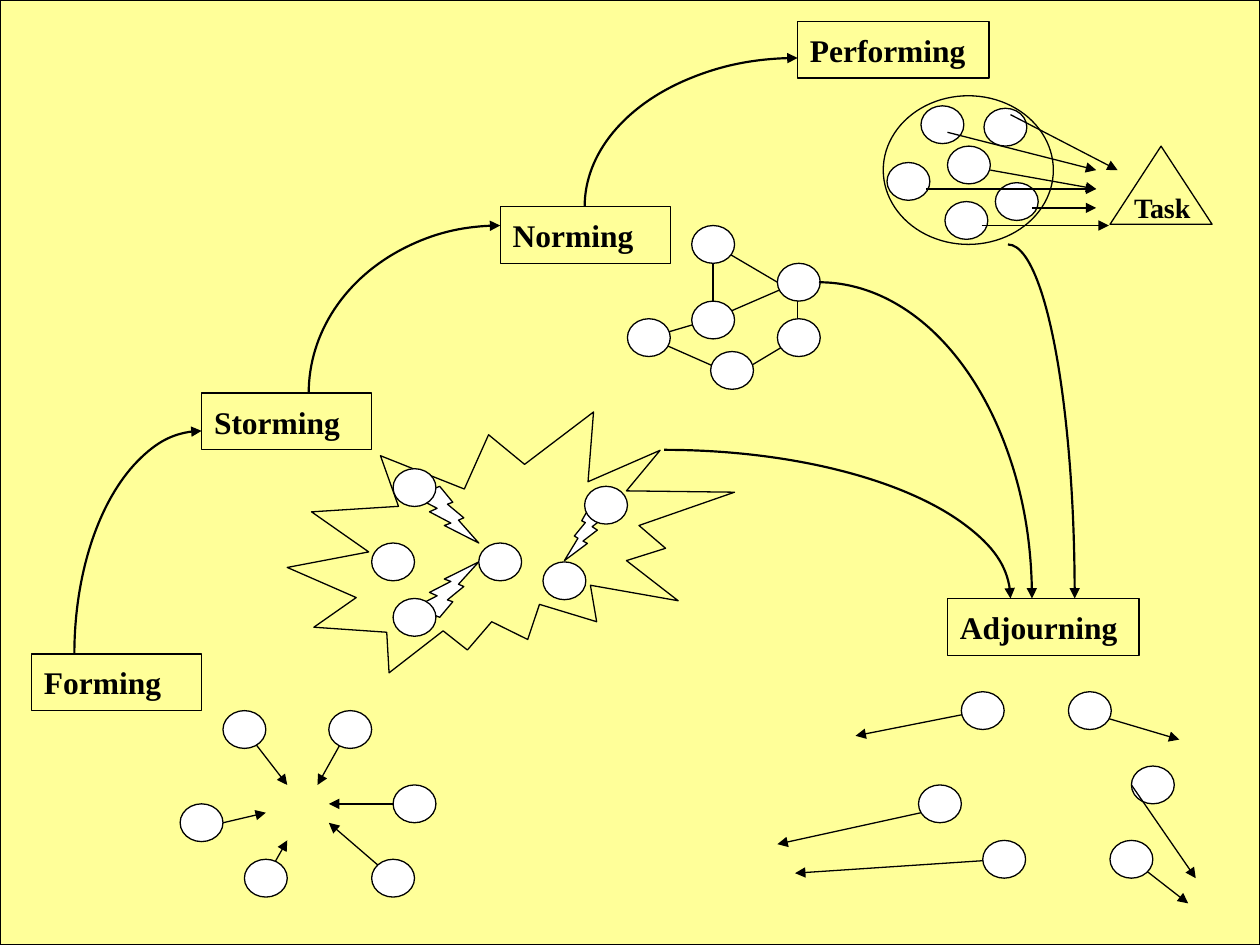
from lxml import etree
from pptx import Presentation
from pptx import util as u
from pptx.dml.color import RGBColor
from pptx.enum import shapes, text
from pptx.oxml import ns

INK = RGBColor(0, 0, 0)
WHITE = RGBColor(255, 255, 255)
CREAM = RGBColor(255, 255, 153)
FONT = "Times New Roman"
KIND = shapes.MSO_SHAPE

# All places are in inches; cm() turns them into Cm lengths.
WIDE, HIGH = 10, 7.5
DOT = (0.34, 0.3)
STAGES = [
    ("Forming", 0.25, 5.19, 1.35),
    ("Storming", 1.6, 3.12, 1.35),
    ("Norming", 3.97, 1.64, 1.35),
    ("Performing", 6.33, 0.17, 1.52),
    ("Adjourning", 7.52, 4.75, 1.52),
]
STAGE_H = 0.45

# Each team: lines below the dots, dots (left, top), lines above the dots
TEAMS = {
    "forming": dict(
        below=[(1.77, 6.53, 2.11, 6.45), (1.94, 5.79, 2.28, 6.23),
               (3.12, 6.38, 2.61, 6.38), (3.12, 6.97, 2.61, 6.53),
               (2.11, 6.97, 2.28, 6.67), (2.76, 5.8, 2.52, 6.23)],
        dots=[(3.12, 6.23), (1.43, 6.38), (1.77, 5.64),
              (2.61, 5.64), (2.95, 6.82), (1.94, 6.82)],
        above=[], arrow=True),
    "storming": dict(
        below=[],
        dots=[(3.8, 4.31), (2.95, 4.31), (4.64, 3.86),
              (4.31, 4.46), (3.12, 4.75), (3.12, 3.72)],
        above=[], arrow=False),
    "norming": dict(
        below=[(5.66, 1.94, 6.17, 2.24), (5.66, 1.94, 5.66, 2.53),
               (5.83, 2.98, 6.33, 2.68), (6.33, 2.24, 6.33, 2.68),
               (5.66, 2.53, 6.33, 2.24), (5.66, 2.53, 5.15, 2.68),
               (5.15, 2.68, 5.83, 2.98)],
        dots=[(5.49, 1.79), (6.17, 2.09), (6.17, 2.53),
              (5.49, 2.39), (5.64, 2.79), (4.98, 2.53)],
        above=[], arrow=False),
    "performing": dict(
        below=[],
        dots=[(7.52, 1.16), (7.04, 1.29), (7.81, 0.86),
              (7.9, 1.45), (7.5, 1.6), (7.31, 0.84)],
        above=[(8.02, 0.91, 8.87, 1.35), (7.52, 1.05, 8.7, 1.35),
               (7.86, 1.35, 8.7, 1.5), (8.19, 1.65, 8.7, 1.65),
               (7.79, 1.79, 8.8, 1.79), (7.35, 1.5, 8.7, 1.5)],
        arrow=True),
    "adjourning": dict(
        below=[(7.63, 6.38, 6.17, 6.7), (7.8, 5.64, 6.79, 5.84),
               (8.98, 6.82, 9.43, 7.17), (7.97, 6.82, 6.31, 6.93),
               (8.62, 5.65, 9.36, 5.87)],
        dots=[(8.98, 6.08), (7.29, 6.23), (7.63, 5.49),
              (8.48, 5.49), (8.81, 6.67), (7.8, 6.67)],
        above=[(8.98, 6.23, 9.49, 6.97)], arrow=True),
}

CLASH = (2.28, 3.27, 3.55, 2.07)
BOLTS = [
    ((3.29, 3.86, 0.51, 0.45), None),
    ((3.29, 4.46, 0.51, 0.44), "flipV"),
    ((4.48, 4.01, 0.34, 0.44), "flipH"),
]
RING = (7.01, 0.76, 1.35, 1.18)
GOAL = (8.81, 1.16, 0.81, 0.62)
GOAL_TEXT = (8.82, 1.46, 1.01, 0.45)

# Quarter arcs from start to end: those that climb, then those that fall
CLIMBS = [(0.59, 5.19, 1.6, 3.42), (2.45, 3.12, 3.97, 1.79),
          (4.64, 1.64, 6.33, 0.46)]
FALLS = [(5.27, 3.57, 8.02, 4.75), (6.5, 2.24, 8.19, 4.75),
         (8, 1.94, 8.53, 4.75)]
TURN = 90 * 60000

deck = Presentation()
deck.slide_width, deck.slide_height = u.Cm(WIDE * 2.54), u.Cm(HIGH * 2.54)
page = deck.slides.add_slide(deck.slide_layouts[6]).shapes


def cm(*vals):
    return [u.Cm(val * 2.54) for val in vals]


def ink(item, width=0.75, arrow=False):
    """Black outline, with an arrowhead at its end if asked for."""
    item.line.color.rgb = INK
    item.line.width = u.Pt(width)
    if arrow:
        edge = item._element.spPr.find(ns.qn("a:ln"))
        etree.SubElement(edge, ns.qn("a:tailEnd"), type="triangle")


def draw(kind, box, fill=None):
    item = page.add_shape(kind, *cm(*box))
    item.shadow.inherit = False
    if fill is None:
        item.fill.background()
    else:
        item.fill.solid()
        item.fill.fore_color.rgb = fill
    ink(item)
    return item


def write(item, words, size=18, anchor=text.MSO_ANCHOR.MIDDLE, inset=0.1):
    frame = item.text_frame
    frame.word_wrap = True
    frame.vertical_anchor = anchor
    frame.margin_left = cm(inset)[0]
    para = frame.paragraphs[0]
    para.alignment = text.PP_ALIGN.LEFT
    run = para.add_run()
    run.text = words
    run.font.name, run.font.size, run.font.bold = FONT, u.Pt(size), True
    run.font.color.rgb = INK


def join(ends, arrow):
    item = page.add_connector(shapes.MSO_CONNECTOR.STRAIGHT, *cm(*ends))
    ink(item, arrow=arrow)
    etree.SubElement(item._element.spPr, ns.qn("a:effectLst"))


def bend(ends, angle):
    """Quarter ellipse between two points, starting at the given angle."""
    left, top, right, low = cm(*ends)
    pen = page.build_freeform(left, top)
    pen.add_line_segments([(right, low)], close=False)
    item = pen.convert_to_shape()
    item.shadow.inherit = False
    item.fill.background()
    ink(item, 1.25, True)
    step = item._element.find(".//" + ns.qn("a:lnTo"))
    arc = etree.Element(
        ns.qn("a:arcTo"), wR=str(abs(right - left)), hR=str(abs(low - top)),
        stAng=str(angle), swAng=str(TURN))
    step.getparent().replace(step, arc)


def team(name):
    crew = TEAMS[name]
    for ends in crew["below"]:
        join(ends, crew["arrow"])
    for spot in crew["dots"]:
        draw(KIND.OVAL, spot + DOT, WHITE)
    for ends in crew["above"]:
        join(ends, crew["arrow"])


draw(KIND.RECTANGLE, (0, 0, WIDE, HIGH), CREAM)

draw(KIND.EXPLOSION2, CLASH)
for box, flip in BOLTS:
    bolt = draw(KIND.LIGHTNING_BOLT, box, WHITE)
    if flip:
        bolt._element.spPr.xfrm.set(flip, "1")

draw(KIND.OVAL, RING)
draw(KIND.ISOSCELES_TRIANGLE, GOAL)
for name in TEAMS:
    team(name)
write(page.add_textbox(*cm(*GOAL_TEXT)), "Task", size=16,
      anchor=text.MSO_ANCHOR.TOP, inset=0.18)

for name, left, top, width in STAGES:
    write(draw(KIND.RECTANGLE, (left, top, width, STAGE_H)), name)
for ends in CLIMBS:
    bend(ends, 2 * TURN)
for ends in FALLS:
    bend(ends, 3 * TURN)

deck.save("out.pptx")
